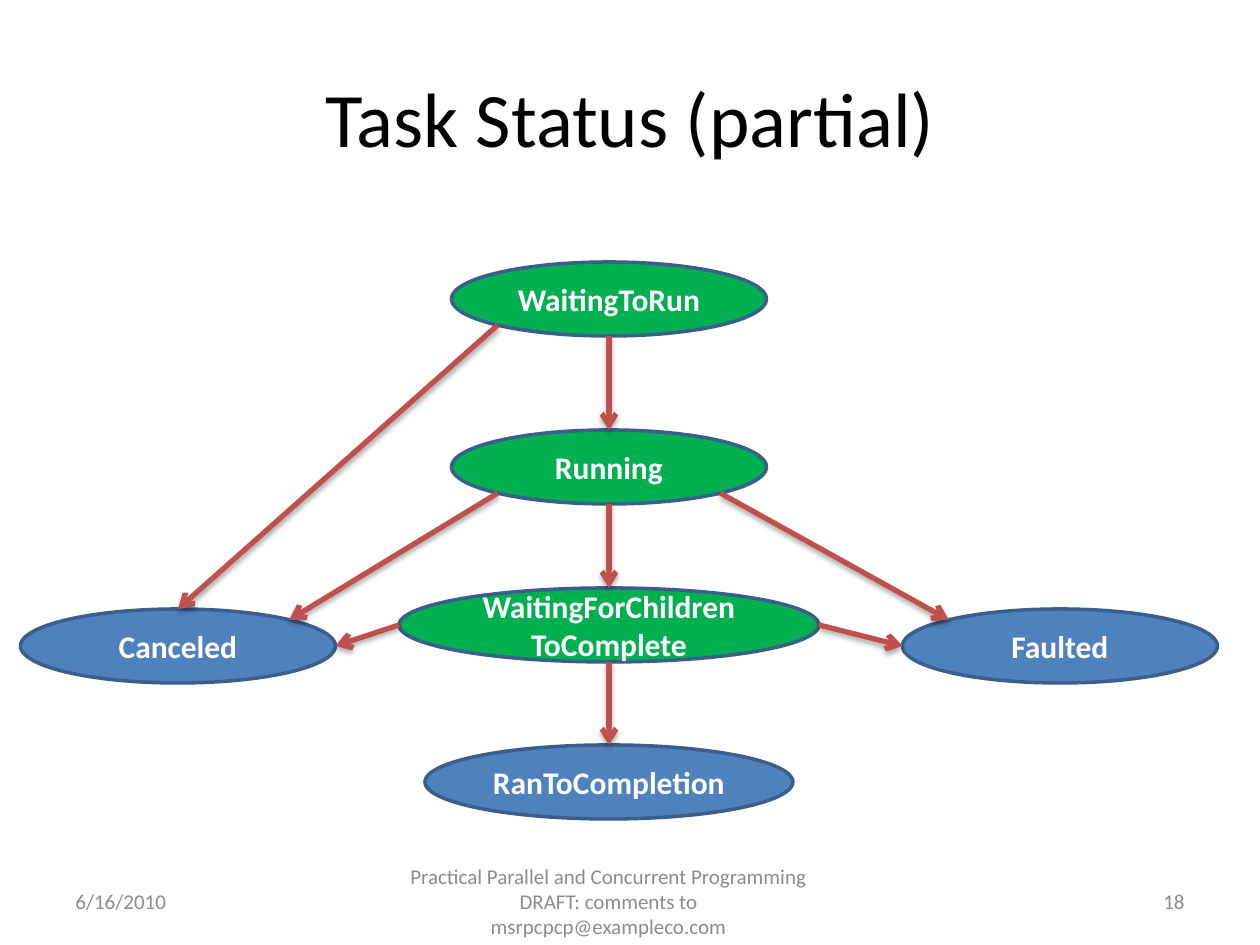
from math import sqrt

from lxml.etree import SubElement
from pptx import Presentation
from pptx.dml.color import RGBColor
from pptx.enum.shapes import MSO_CONNECTOR, MSO_SHAPE
from pptx.enum.text import MSO_ANCHOR, PP_ALIGN
from pptx.oxml.ns import qn
from pptx.util import Emu, Pt

PX_PER_INCH = 126
FONT = "Calibri"
COLORS = {
    "title": "000000",
    "active": "00B050",
    "final": "4F81BD",
    "outline": "3A5F8C",
    "arrow": "C0504D",
    "label": "FFFFFF",
    "footer": "8C8C8C",
    "shadow": "000000",
}

# State: lines of the label, centre x, top, width, colour
STATE_HEIGHT = 74
STATES = {
    "waiting": (["WaitingToRun"], 609, 262, 315, "active"),
    "running": (["Running"], 609, 430, 315, "active"),
    "children": (["WaitingForChildren", "ToComplete"], 609, 588, 420, "active"),
    "canceled": (["Canceled"], 178, 609, 315, "final"),
    "faulted": (["Faulted"], 1060, 609, 315, "final"),
    "completed": (["RanToCompletion"], 609, 745, 368, "final"),
}

# Points on an ellipse, as shares of its half width and half height
DIAGONAL = sqrt(0.5)
SITES = {
    "top": (0, -1),
    "bottom": (0, 1),
    "left": (-1, 0),
    "right": (1, 0),
    "top left": (-DIAGONAL, -DIAGONAL),
    "top right": (DIAGONAL, -DIAGONAL),
    "bottom left": (-DIAGONAL, DIAGONAL),
    "bottom right": (DIAGONAL, DIAGONAL),
}
TRANSITIONS = [
    ("waiting", "bottom", "running", "top"),
    ("waiting", "bottom left", "canceled", "top"),
    ("running", "bottom", "children", "top"),
    ("running", "bottom left", "canceled", "top right"),
    ("running", "bottom right", "faulted", "top left"),
    ("children", "bottom", "completed", "top"),
    ("children", "right", "faulted", "left"),
    ("children", "left", "canceled", "right"),
]

# Footer: text, left, width, alignment
FOOTERS = [
    ("6/16/2010", 63, 294, PP_ALIGN.LEFT),
    ("Practical Parallel and Concurrent Programming "
     "DRAFT: comments to msrpcpcp@exampleco.com", 388, 441, PP_ALIGN.CENTER),
    ("18", 903, 294, PP_ALIGN.RIGHT),
]


def px(length):
    return Emu(round(length * 914400 / PX_PER_INCH))


def color(name):
    return RGBColor.from_string(COLORS[name])


def write(frame, lines, size, color_name, align=PP_ALIGN.CENTER, bold=False):
    frame.word_wrap = True
    frame.vertical_anchor = MSO_ANCHOR.MIDDLE
    for index, line in enumerate(lines):
        para = frame.add_paragraph() if index else frame.paragraphs[0]
        para.alignment = align
        span = para.add_run()
        span.text = line
        span.font.name = FONT
        span.font.size = Pt(size)
        span.font.bold = bold
        span.font.color.rgb = color(color_name)


def add_title(page, text):
    title = page.shapes.title
    title.left, title.top, title.width, title.height = map(px, (63, 38, 1134, 157))
    write(title.text_frame, [text], 44, "title")


def add_state(page, lines, center, top, width, fill):
    oval = page.shapes.add_shape(
        MSO_SHAPE.OVAL, px(center - width / 2), px(top), px(width), px(STATE_HEIGHT))
    oval.shadow.inherit = False
    oval.fill.solid()
    oval.fill.fore_color.rgb = color(fill)
    oval.line.color.rgb = color("outline")
    oval.line.width = Pt(2)
    frame = oval.text_frame
    frame.margin_left = frame.margin_right = 0
    write(frame, lines, 18, "label", bold=True)


def site_point(state, site):
    lines, center, top, width, fill = STATES[state]
    across, down = SITES[site]
    return (px(center + across * width / 2),
            px(top + (1 + down) * STATE_HEIGHT / 2))


def add_shadow(properties):
    effects = SubElement(properties, qn("a:effectLst"))
    shadow = SubElement(effects, qn("a:outerShdw"), blurRad="40000",
                        dist="23000", dir="5400000", rotWithShape="0")
    shade = SubElement(shadow, qn("a:srgbClr"), val=COLORS["shadow"])
    SubElement(shade, qn("a:alpha"), val="35000")


def add_transition(page, source, source_site, target, target_site):
    arrow = page.shapes.add_connector(
        MSO_CONNECTOR.STRAIGHT,
        *site_point(source, source_site), *site_point(target, target_site))
    arrow.line.color.rgb = color("arrow")
    arrow.line.width = Pt(3)
    SubElement(arrow.line._get_or_add_ln(), qn("a:tailEnd"), type="arrow")
    add_shadow(arrow._element.spPr)


def add_footer(page, text, left, width, align):
    box = page.shapes.add_textbox(px(left), px(876), px(width), px(50))
    write(box.text_frame, [text], 12, "footer", align)


def main():
    deck = Presentation()
    deck.slide_width, deck.slide_height = px(1260), px(945)
    page = deck.slides.add_slide(deck.slide_layouts[5])

    add_title(page, "Task Status (partial)")

    # State diagram
    for state in STATES.values():
        add_state(page, *state)
    for transition in TRANSITIONS:
        add_transition(page, *transition)

    # Date, course and page number
    for footer in FOOTERS:
        add_footer(page, *footer)

    deck.save("out.pptx")


if __name__ == "__main__":
    main()
